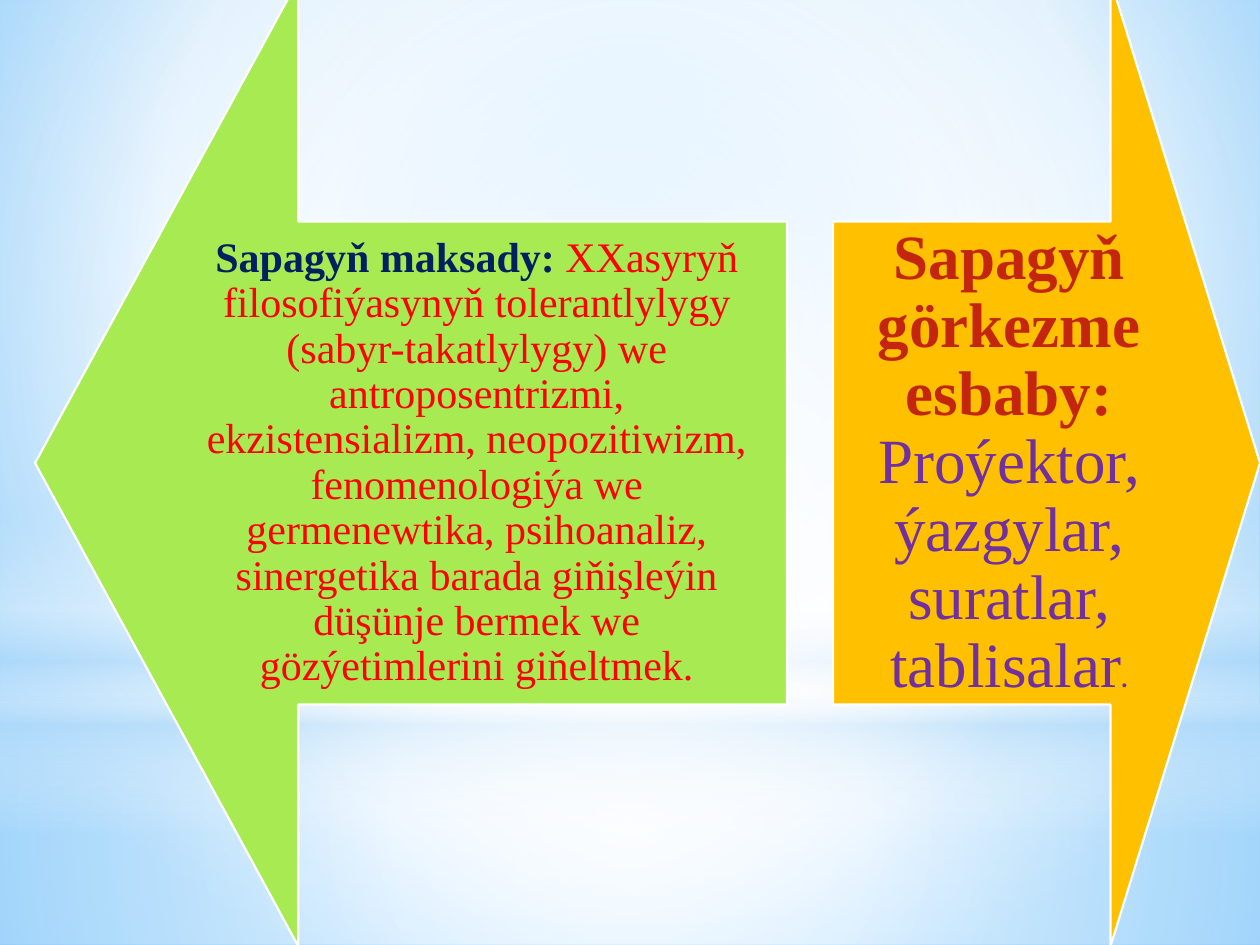
from lxml.etree import SubElement
from pptx import Presentation
from pptx.dml.color import RGBColor
from pptx.enum.shapes import MSO_SHAPE as Shape
from pptx.enum.text import MSO_ANCHOR as Anchor, PP_ALIGN as Align
from pptx.oxml.ns import qn
from pptx.util import Emu, Pt

PX = 914400 / 126
WIDTH, HEIGHT = 1260, 945
SERIF = "Times New Roman"
HEAD = 0.35  # arrowhead depth as a share of the arrow's length
CENTRE = (50, 50, 50, 50)


def px(value):
    return Emu(round(value * PX))


def color(value):
    return RGBColor.from_string(value)


def set_gradient(fill, root, stops, focus=None, angle=90):
    """Fill with (position, colour, opacity) stops, radial if a focus is given."""
    fill.solid()
    solid = next(root.iter(qn("a:solidFill")))
    grad = solid.makeelement(qn("a:gradFill"), {"rotWithShape": "1"})
    stop_list = SubElement(grad, qn("a:gsLst"))
    for position, shade, opacity in stops:
        stop = SubElement(stop_list, qn("a:gs"), pos=str(position * 1000))
        tone = SubElement(stop, qn("a:srgbClr"), val=shade)
        if opacity < 100:
            SubElement(tone, qn("a:alpha"), val=str(opacity * 1000))
    if focus:
        radial = SubElement(grad, qn("a:path"), path="circle")
        edges = {side: str(share * 1000) for side, share in zip("ltrb", focus)}
        SubElement(radial, qn("a:fillToRect"), edges)
    else:
        SubElement(grad, qn("a:lin"), ang=str(angle * 60000), scaled="0")
    solid.getparent().replace(solid, grad)


def add_glow(page, kind, top, height, stops, focus=None):
    glow = page.shapes.add_shape(kind, 0, px(top), px(WIDTH), px(height))
    glow.shadow.inherit = False
    glow.line.fill.background()
    set_gradient(glow.fill, glow.element, stops, focus)


def add_backdrop(page):
    set_gradient(page.background.fill, page.element,
                 [(0, "9ED5FF", 100), (60, "FFFFFF", 100), (100, "5BB9FF", 100)],
                 (20, 10, 20, 60))
    horizon = 703
    # Floor and sky
    add_glow(page, Shape.RECTANGLE, horizon, HEIGHT - horizon,
             [(0, "FFFFFF", 91), (37, "FFFFFF", 76), (100, "B4DCFA", 79)], CENTRE)
    add_glow(page, Shape.RECTANGLE, 0, horizon,
             [(0, "FFFFFF", 89), (48, "FFFFFF", 62), (100, "B4DCFA", 79)], CENTRE)
    # Horizon band and central light
    add_glow(page, Shape.RECTANGLE, 519, 315,
             [(0, "FFFFFF", 0), (29, "FFFFFF", 30), (45, "B4DCFA", 40),
              (55, "FFFFFF", 26), (65, "B4DCFA", 60), (100, "FFFFFF", 0)])
    add_glow(page, Shape.OVAL, 221, horizon,
             [(0, "FFFFFF", 100), (56, "FFFFFF", 0)], CENTRE)


def add_span(para, text, *, size, shade, font=SERIF, bold=False):
    span = para.add_run()
    span.text = text
    span.font.size = Pt(size)
    span.font.name = font
    span.font.bold = bold
    span.font.color.rgb = color(shade)


def add_arrow(page, left, top, width, height, *, rotation, fill, inset, spans):
    # An up arrow turned sideways, so its own frame swaps width and height
    arrow = page.shapes.add_shape(
        Shape.UP_ARROW, px(left + (width - height) / 2),
        px(top + (height - width) / 2), px(height), px(width))
    arrow.rotation = rotation
    arrow.adjustments[0], arrow.adjustments[1] = 0.5, HEAD
    arrow.shadow.inherit = False
    arrow.fill.solid()
    arrow.fill.fore_color.rgb = color(fill)
    arrow.line.color.rgb = color("FFFFFF")
    arrow.line.width = Pt(1.25)

    # Text covers the shaft and half of the head
    half_head = width * HEAD / 2
    text_left = left + half_head if rotation == 270 else left
    box = page.shapes.add_textbox(px(text_left), px(top + height / 4),
                                  px(width - half_head), px(height / 2))
    frame = box.text_frame
    frame.word_wrap = True
    frame.vertical_anchor = Anchor.MIDDLE
    frame.margin_left = frame.margin_right = px(inset)
    frame.margin_top = frame.margin_bottom = px(inset)
    para = frame.paragraphs[0]
    para.alignment = Align.CENTER
    para.line_spacing = 0.9
    for text, style in spans:
        add_span(para, text, **style)


def main():
    deck = Presentation()
    deck.slide_width, deck.slide_height = px(WIDTH), px(HEIGHT)
    page = deck.slides.add_slide(deck.slide_layouts[6])
    add_backdrop(page)

    # Lesson aim
    add_arrow(page, 35, -20, 752, 966, rotation=270, fill="A7EA52", inset=24, spans=[
        ("Sapagyň maksady: ", dict(size=24, shade="002060", bold=True)),
        ("ХХasyryň filosofiýasynyň tolerantlylygy (sabyr-takatlylygy) we "
         "antroposentrizmi, ekzistensializm, neopozitiwizm, fenomenologiýa we "
         "germenewtika, psihoanaliz, sinergetika barada giňişleýin düşünje "
         "bermek we gözýetimlerini giňeltmek.", dict(size=24, shade="FF0000"))])
    # Visual aids
    add_arrow(page, 833, -20, 427, 966, rotation=90, fill="FFC000", inset=35, spans=[
        ("Sapagyň görkezme esbaby: ", dict(size=36, shade="C3260C", bold=True)),
        ("Proýektor, ýazgylar, suratlar, tablisalar", dict(size=36, shade="7030A0")),
        (".", dict(size=20, shade="7030A0", font="Karla"))])
    deck.save("out.pptx")


if __name__ == "__main__":
    main()
